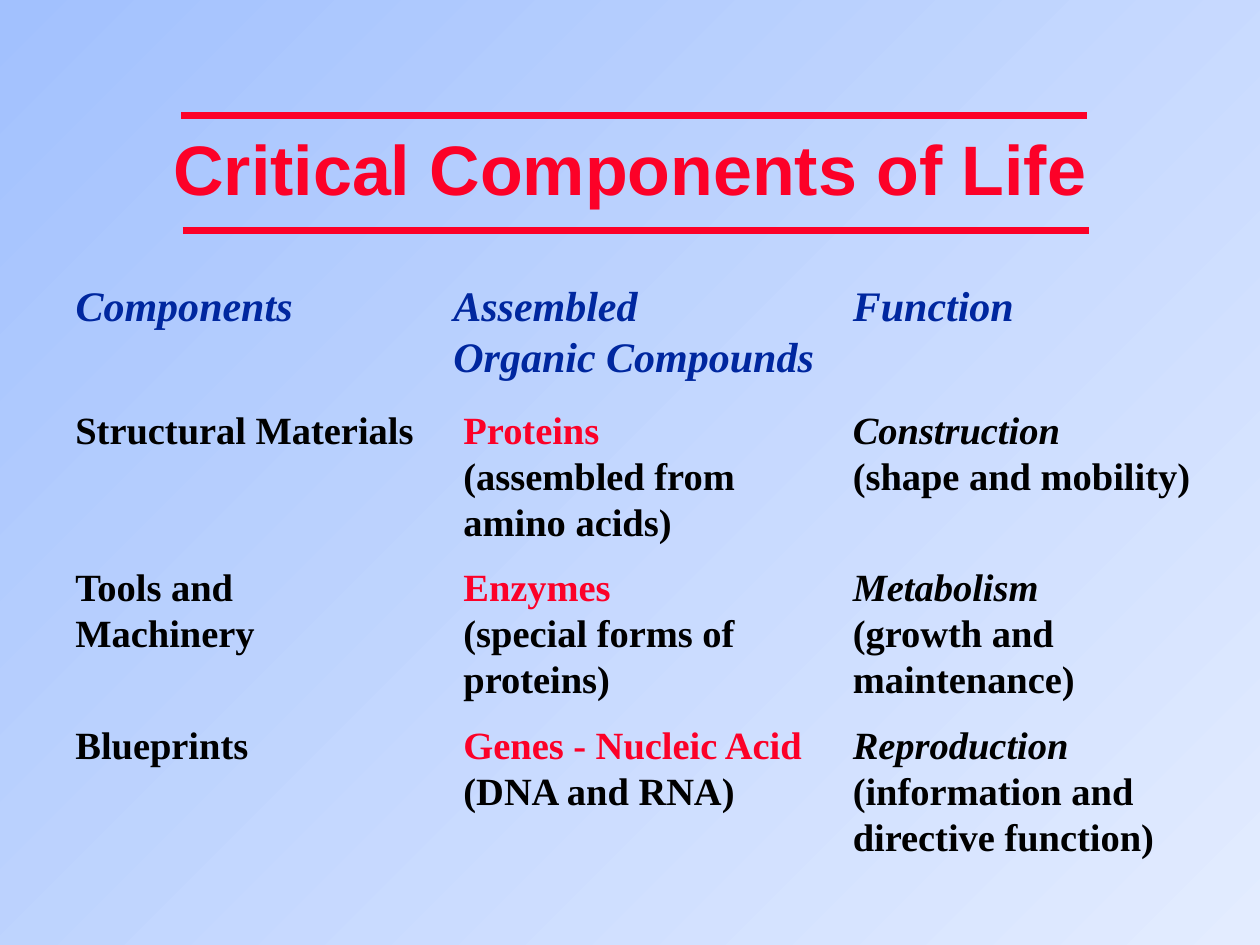
"""Build the slide on the critical components of life."""
from lxml.etree import SubElement
from pptx import Presentation
from pptx.dml.color import RGBColor
from pptx.enum.shapes import MSO_CONNECTOR as Link
from pptx.enum.text import MSO_ANCHOR as Anchor, MSO_AUTO_SIZE as Fit, PP_ALIGN as Align
from pptx.oxml.ns import qn
from pptx.util import Inches, Pt

RED = RGBColor(0xFC, 0x01, 0x28)
BLUE = RGBColor(0x00, 0x27, 0x9F)
BLACK = RGBColor(0, 0, 0)
SKY = RGBColor(0xA2, 0xC1, 0xFE)
PALE = RGBColor(0xE3, 0xEC, 0xFF)
SERIF = "Times New Roman"

TITLE = "Critical Components of Life"
HEADS = [
    (0.5, 2.92, ["Components"]),
    (3.5, 3.08, ["Assembled", "Organic Compounds"]),
    (6.67, 2.92, ["Function"]),
]
ROWS = [
    (["Structural Materials"],
     ["Proteins", "(assembled from amino acids)"],
     ["Construction", "(shape and mobility)"]),
    (["Tools and Machinery"],
     ["Enzymes", "(special forms of proteins)"],
     ["Metabolism", "(growth and maintenance)"]),
    (["Blueprints"],
     ["Genes - Nucleic Acid", "(DNA and RNA)"],
     ["Reproduction", "(information and directive function)"]),
]
COLS = [(0.5, BLACK, False), (3.58, RED, False), (6.67, BLACK, True)]
RULES = [(1.44, 0.92), (1.45, 1.83)]
RULE_W = 7.19
HEAD_Y, ROW_Y, STEP = 2.17, 3.17, 1.25
CELL_W, CELL_H = 2.92, 1.17


def write(shape, box, lines, align=Align.LEFT, anchor=Anchor.TOP):
    """Place a shape and fill it with styled lines."""
    shape.left, shape.top, shape.width, shape.height = map(Inches, box)
    frame = shape.text_frame
    frame.word_wrap = True
    frame.auto_size = Fit.NONE
    frame.vertical_anchor = anchor
    for i, (text, face, size, color, slant) in enumerate(lines):
        para = frame.add_paragraph() if i else frame.paragraphs[0]
        para.alignment = align
        para.space_before = Pt(0)
        run = para.add_run()
        run.text = text
        font = run.font
        font.name, font.size, font.bold, font.italic = face, Pt(size), True, slant
        font.color.rgb = color


def new_box(slide):
    """Add an empty text box."""
    return slide.shapes.add_textbox(0, 0, 0, 0)


def add_rule(slide, x, y):
    """Draw a red rule beside the title."""
    rule = slide.shapes.add_connector(
        Link.STRAIGHT, Inches(x), Inches(y), Inches(x + RULE_W), Inches(y))
    rule.line.color.rgb = RED
    rule.line.width = Pt(4)
    SubElement(rule._element.spPr, qn("a:effectLst"))


def main():
    """Lay out the slide and save it."""
    deck = Presentation()
    deck.slide_width, deck.slide_height = Inches(10), Inches(7.5)
    slide = deck.slides.add_slide(deck.slide_layouts[0])
    fill = slide.background.fill
    fill.gradient()
    fill.gradient_angle = 315
    for stop, color in zip(fill.gradient_stops, (SKY, PALE)):
        stop.color.rgb = color

    write(slide.shapes.title, (0.75, 0.83, 8.5, 1),
          [(TITLE, "Arial", 40, RED, False)], Align.CENTER, Anchor.MIDDLE)
    for x, y in RULES:
        add_rule(slide, x, y)

    for i, (x, width, texts) in enumerate(HEADS):
        shape = new_box(slide) if i else slide.placeholders[1]
        high = 0.92 if len(texts) > 1 else 0.67
        write(shape, (x, HEAD_Y, width, high),
              [(text, SERIF, 24, BLUE, True) for text in texts])

    for i, row in enumerate(ROWS):
        for (x, color, slant), texts in zip(COLS, row):
            lines = [(text, SERIF, 22, BLACK if j else color, slant and not j)
                     for j, text in enumerate(texts)]
            write(new_box(slide), (x, ROW_Y + i * STEP, CELL_W, CELL_H), lines)

    deck.save("out.pptx")


if __name__ == "__main__":
    main()
